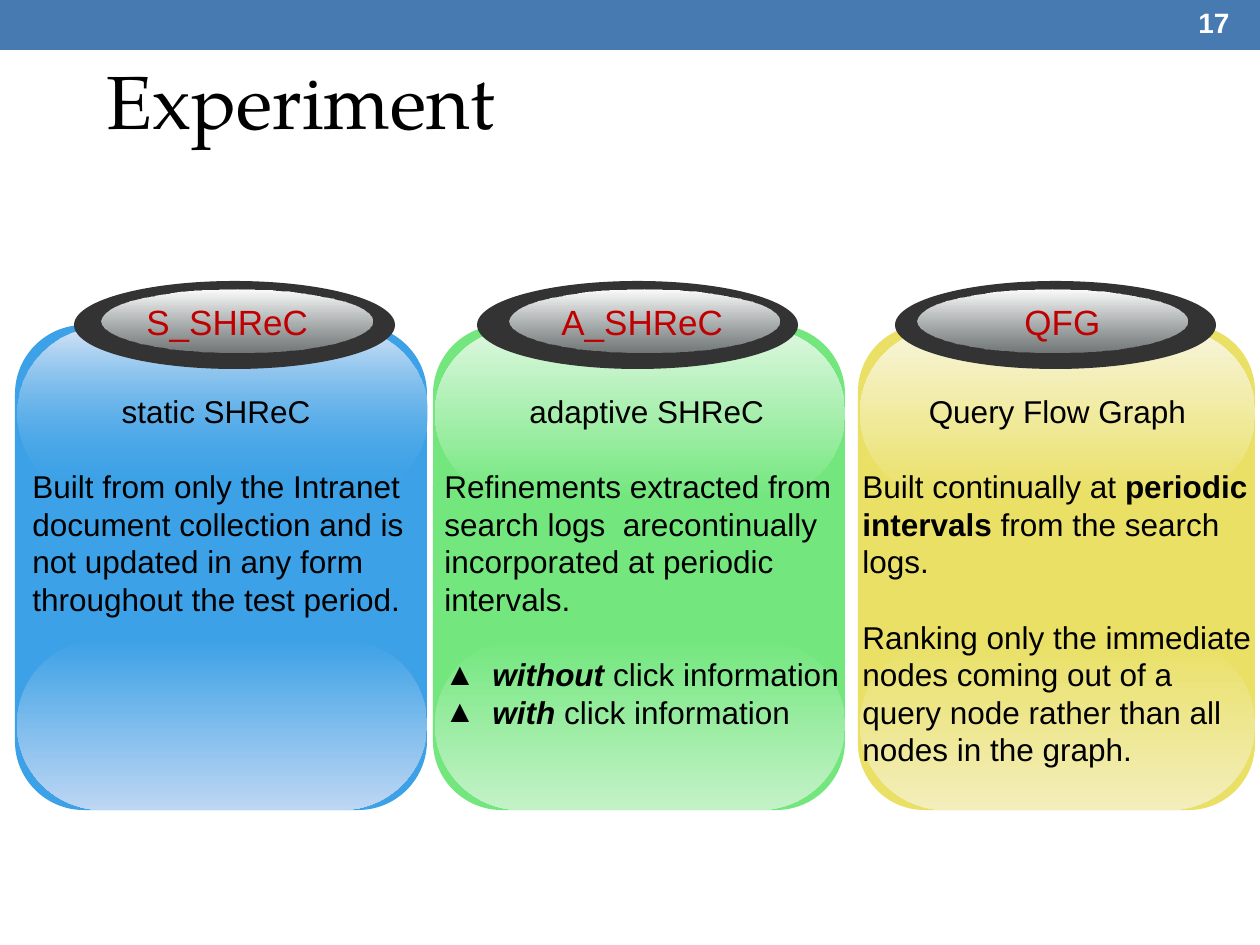
from pptx import Presentation
from pptx import util as u
from pptx.dml.color import RGBColor
from pptx.enum import shapes, text
from pptx.oxml import ns
from lxml import etree

PX = 914400 / 126
LINE = 21.5  # body line pitch in points
COLORS = {
    "bar": "477AB1", "ring": "333333", "label": "C00000",
    "black": "000000", "white": "FFFFFF", "silver": "D6E1E2",
}
ROUND, OVAL = shapes.MSO_SHAPE.ROUNDED_RECTANGLE, shapes.MSO_SHAPE.OVAL


def box(*lengths):
    return [u.Emu(round(length * PX)) for length in lengths]


class Deck:
    font = "Arial"

    def __init__(self):
        self.presentation = Presentation()
        self.presentation.slide_width, self.presentation.slide_height = box(1260, 945)
        self.slide = self.presentation.slides.add_slide(self.presentation.slide_layouts[5])

    def style(self, run, size, color, font=None, bold=False, italic=False):
        run.font.name = font or self.font
        run.font.size = u.Pt(size)
        run.font.bold, run.font.italic = bold, italic
        run.font.color.rgb = RGBColor.from_string(color)

    def title(self, words, place):
        shape = self.slide.shapes.title
        shape.left, shape.top, shape.width, shape.height = box(*place)
        frame = shape.text_frame
        frame.text = words
        frame.vertical_anchor = text.MSO_ANCHOR.TOP
        frame.auto_size = text.MSO_AUTO_SIZE.NONE
        frame.paragraphs[0].alignment = text.PP_ALIGN.LEFT
        self.style(frame.paragraphs[0].runs[0], 43, COLORS["black"], "TeX Gyre Pagella")

    def shape(self, kind, place, color, end=None, end_alpha=100, corner=None):
        """Solid shape, or a top-to-bottom gradient when an end colour is given."""
        shape = self.slide.shapes.add_shape(kind, *box(*place))
        shape.shadow.inherit = False
        shape.line.fill.background()
        if corner is not None:
            shape.adjustments[0] = corner
        if end is None:
            shape.fill.solid()
            shape.fill.fore_color.rgb = RGBColor.from_string(color)
            return
        shape.fill.gradient()
        shape.fill.gradient_angle = 270
        for stop, value, position in zip(shape.fill.gradient_stops, (color, end), (0, 1)):
            stop.color.rgb = RGBColor.from_string(value)
            stop.position = position
        if end_alpha < 100:
            last = list(shape.element.spPr.iter(ns.qn("a:srgbClr")))[-1]
            etree.SubElement(last, ns.qn("a:alpha"), val=str(end_alpha * 1000))

    def label(self, words, place, size, color, bold=False, middle=False):
        frame = self.slide.shapes.add_textbox(*box(*place)).text_frame
        frame.text = words
        frame.word_wrap = False
        if middle:
            frame.vertical_anchor = text.MSO_ANCHOR.MIDDLE
        self.style(frame.paragraphs[0].runs[0], size, color, bold=bold)

    def body(self, paragraphs, place):
        """Each paragraph is (kind, runs); each run is (words, bold, italic)."""
        frame = self.slide.shapes.add_textbox(*box(*place)).text_frame
        frame.word_wrap = True
        previous = None
        for kind, runs in paragraphs:
            paragraph = frame.add_paragraph() if previous else frame.paragraphs[0]
            paragraph.line_spacing = u.Pt(LINE)
            paragraph.alignment = text.PP_ALIGN.CENTER if kind == "heading" else text.PP_ALIGN.LEFT
            if previous and not previous == kind == "bullet":
                paragraph.space_before = u.Pt(LINE)
            if kind == "bullet":
                self.bullet(paragraph)
            for words, bold, italic in runs:
                run = paragraph.add_run()
                run.text = words
                self.style(run, 18, COLORS["black"], bold=bold, italic=italic)
            previous = kind

    def bullet(self, paragraph):
        properties = paragraph._p.get_or_add_pPr()
        indent = box(48)[0]
        properties.set("marL", str(indent))
        properties.set("indent", str(-indent))
        etree.SubElement(properties, ns.qn("a:buFont"), typeface=self.font)
        etree.SubElement(properties, ns.qn("a:buChar"), char="▲")

    def panel(self, name, left, width, color, top_light, bottom_light, fade,
              ring, disc, label, body, paragraphs):
        # Card with a glossy bottom and top
        self.shape(ROUND, (left, 325, width, 485), color, corner=0.167)
        gloss = left + 2, width - 2
        self.shape(ROUND, (gloss[0], 639, gloss[1], 171), color, bottom_light, corner=0.5)
        self.shape(ROUND, (gloss[0], 328, gloss[1], 170), top_light, color, fade, corner=0.5)
        # Name badge
        self.shape(OVAL, (ring, 281, 321, 88), COLORS["ring"])
        self.shape(OVAL, (disc, 290, 270, 63), COLORS["white"], COLORS["silver"], 38)
        self.label(name, (label[0], 294, label[1], 55), 20, COLORS["label"])
        # Description
        self.body(paragraphs, (body[0], 386, body[1], body[2]))


def plain(words):
    return words, False, False


PANELS = [
    dict(name="S_SHReC", left=15, width=412, color="3CA1E6", top_light="D7E5F7",
         bottom_light="BDD6F3", fade=0, ring=74, disc=102, label=(134, 198),
         body=(20, 401, 242), paragraphs=[
             ("heading", [plain("static SHReC ")]),
             ("text", [plain("Built from only the Intranet document collection and is not "
                             "updated in any form throughout the test period.")])]),
    dict(name="QFG", left=858, width=397, color="E9E065", top_light="F8F5DB",
         bottom_light="F3EEBB", fade=100, ring=895, disc=917, label=(1012, 105),
         body=(850, 415, 394), paragraphs=[
             ("heading", [plain("Query Flow Graph")]),
             ("text", [plain("Built continually at "), ("periodic intervals", True, False),
                       plain(" from the search logs.")]),
             ("text", [plain("Ranking only the immediate nodes coming out of a query node "
                             "rather than all nodes in the graph.")])]),
    dict(name="A_SHReC", left=433, width=412, color="73E77E", top_light="DDF7DF",
         bottom_light="C3F2C7", fade=100, ring=477, disc=509, label=(549, 190),
         body=(432, 438, 394), paragraphs=[
             ("heading", [plain("adaptive SHReC ")]),
             ("text", [plain("Refinements extracted from search logs  arecontinually "
                             "incorporated at periodic intervals.")]),
             ("bullet", [("without", True, True), plain(" click information")]),
             ("bullet", [("with ", True, True), plain("click information")])]),
]


def main():
    deck = Deck()
    # Header bar, title and slide number
    deck.shape(shapes.MSO_SHAPE.RECTANGLE, (0, 0, 1260, 50), COLORS["bar"])
    deck.title("Experiment", (94, 48, 998, 117))
    deck.label("17", (1186, 0, 69, 45), 16, COLORS["white"], bold=True, middle=True)
    # Three method panels
    for panel in PANELS:
        deck.panel(**panel)
    deck.presentation.save("out.pptx")


if __name__ == "__main__":
    main()
